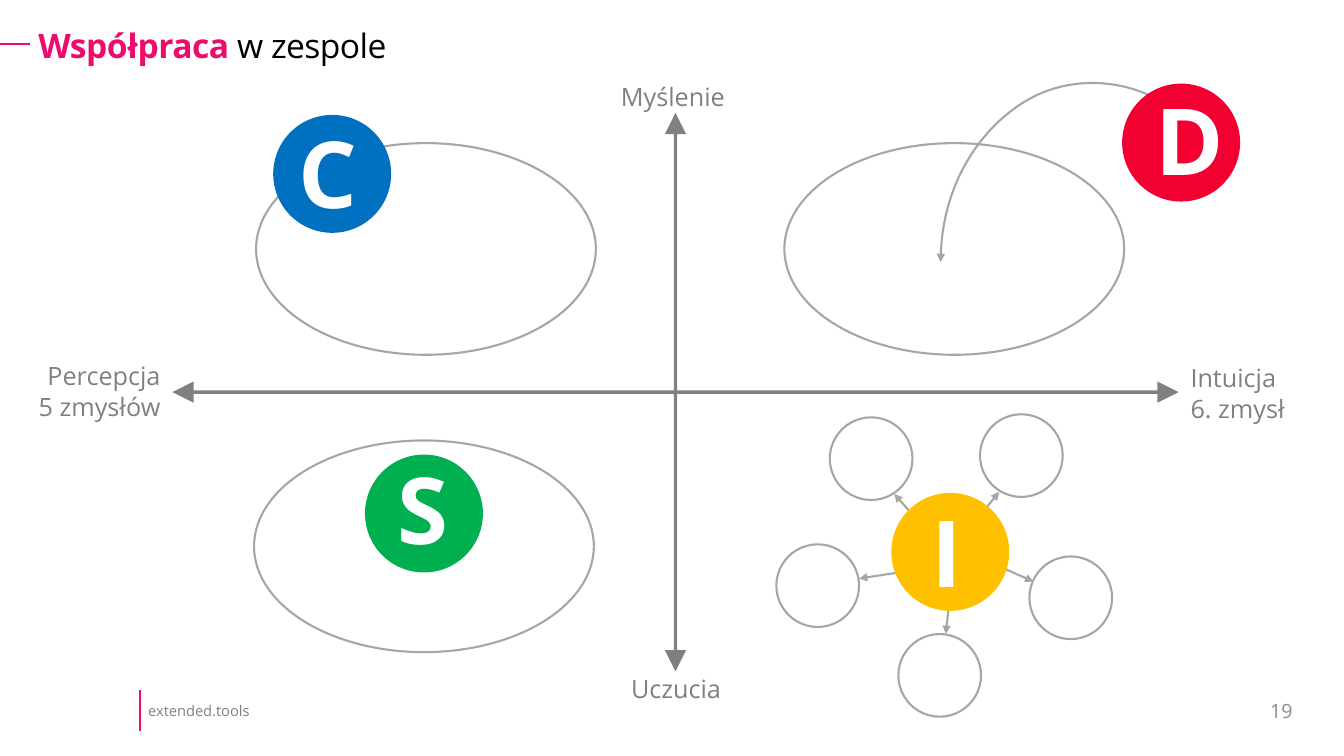
from lxml import etree
from pptx import Presentation
from pptx import util as u
from pptx.dml.color import RGBColor
from pptx.enum import shapes, text
from pptx.oxml.ns import qn

FONT = "Open Sans"
PINK = RGBColor(0xED, 0x0C, 0x6D)
BLACK = RGBColor(0, 0, 0)
WHITE = RGBColor(0xFF, 0xFF, 0xFF)
AXIS_GRAY = RGBColor(0x80, 0x80, 0x80)
NUMBER_GRAY = RGBColor(0x8C, 0x8C, 0x8C)
OUTLINE_GRAY = RGBColor(0xA6, 0xA6, 0xA6)
RED = RGBColor(0xF1, 0x00, 0x31)
GREEN = RGBColor(0x00, 0xB0, 0x50)
YELLOW = RGBColor(0xFF, 0xC0, 0x00)
BLUE = RGBColor(0x00, 0x70, 0xC0)

OVAL_SIZE = (3.37, 2.1)
BADGE_SIZE = 1.17
RING_SIZE = 0.82


def inches(*lengths):
    return [u.Inches(length) for length in lengths]


def format_run(run, size, color, bold=False, spacing=None):
    run.font.name = FONT
    run.font.size = u.Pt(size)
    run.font.color.rgb = color
    run.font.bold = bold
    if spacing is not None:
        run.font._element.set("spc", str(round(spacing * 100)))


def set_insets(frame, horizontal, vertical):
    frame.margin_left = frame.margin_right = u.Inches(horizontal)
    frame.margin_top = frame.margin_bottom = u.Inches(vertical)


def add_text(slide, box, words, size=18, color=AXIS_GRAY, bold=False,
             align=text.PP_ALIGN.LEFT, anchor=text.MSO_ANCHOR.TOP,
             insets=(0.1, 0.05), wrap=False):
    frame = slide.shapes.add_textbox(*inches(*box)).text_frame
    frame.word_wrap = wrap
    frame.vertical_anchor = anchor
    set_insets(frame, *insets)
    for index, line in enumerate(words.split("\n")):
        paragraph = frame.add_paragraph() if index else frame.paragraphs[0]
        paragraph.alignment = align
        run = paragraph.add_run()
        run.text = line
        format_run(run, size, color, bold)


def add_shape(slide, kind, box, fill=None):
    shape = slide.shapes.add_shape(kind, *inches(*box))
    finish_shape(shape, fill)
    return shape


def finish_shape(shape, fill=None):
    shape.shadow.inherit = False
    if fill is None:
        shape.fill.background()
        shape.line.color.rgb = OUTLINE_GRAY
        shape.line.width = u.Pt(1.5)
    else:
        shape.fill.solid()
        shape.fill.fore_color.rgb = fill
        shape.line.fill.background()


def add_arrowhead(line, end):
    etree.SubElement(line._get_or_add_ln(), qn(f"a:{end}"), type="triangle")


def add_line(slide, start, finish, color, arrow=False):
    connector = slide.shapes.add_connector(
        shapes.MSO_CONNECTOR.STRAIGHT, *inches(*start, *finish))
    connector.line.color.rgb = color
    connector.line.width = u.Pt(1.5)
    if arrow:
        etree.SubElement(connector.line._get_or_add_ln(), qn("a:tailEnd"), type="triangle")
    etree.SubElement(connector._element.spPr, qn("a:effectLst"))


def add_oval(slide, left, top):
    add_shape(slide, shapes.MSO_SHAPE.OVAL, (left, top, *OVAL_SIZE))


def add_badge(slide, left, top, letter, color, shift):
    add_shape(slide, shapes.MSO_SHAPE.OVAL, (left, top, BADGE_SIZE, BADGE_SIZE), color)
    add_text(slide, (left + shift[0], top + shift[1], 0.81, 1.21), letter, size=66,
             color=WHITE, bold=True, align=text.PP_ALIGN.CENTER, insets=(0, 0), wrap=True)


def bezier_points(start, first, second, finish, steps=24):
    for step in range(1, steps + 1):
        t = step / steps
        weights = ((1 - t) ** 3, 3 * t * (1 - t) ** 2, 3 * t * t * (1 - t), t ** 3)
        yield tuple(u.Inches(sum(w * c for w, c in zip(weights, axis)))
                    for axis in zip(start, first, second, finish))


def add_title(slide, box):
    title = slide.shapes.title
    title.left, title.top, title.width, title.height = inches(*box)
    frame = title.text_frame
    frame.word_wrap = True
    frame.auto_size = text.MSO_AUTO_SIZE.NONE
    frame.vertical_anchor = text.MSO_ANCHOR.TOP
    set_insets(frame, 0.08, 0.04)
    paragraph = frame.paragraphs[0]
    paragraph.alignment = text.PP_ALIGN.LEFT
    paragraph.line_spacing = 0.9
    for words, color, bold in (("Współpraca", PINK, True), (" w zespole", BLACK, False)):
        run = paragraph.add_run()
        run.text = words
        format_run(run, 24, color, bold, spacing=-0.4)
    rule_y = box[1] + 0.19
    add_line(slide, (0, rule_y), (box[0], rule_y), PINK)


def add_footer(slide, left, top):
    add_text(slide, (left - 0.05, top + 0.04, 1.72, 0.32), "extended.tools", size=10.5,
             anchor=text.MSO_ANCHOR.MIDDLE, insets=(0.13, 0.07), wrap=True)
    add_line(slide, (left, top), (left, top + 0.4), PINK)
    add_text(slide, (11.66, top, 1.26, 0.4), "19", size=14, color=NUMBER_GRAY,
             align=text.PP_ALIGN.RIGHT, anchor=text.MSO_ANCHOR.MIDDLE,
             insets=(0.1, 0.05), wrap=True)


def add_axes(slide, box):
    left, top, width, height = box
    axes = add_shape(slide, shapes.MSO_SHAPE.QUAD_ARROW, box, AXIS_GRAY)
    for index, ratio in enumerate((0.006, 0.019, 0.038)):
        axes.adjustments[index] = ratio
    right, bottom, middle = left + width, top + height, top + height / 2
    add_text(slide, (right + 0.02, middle - 0.34, 1.14, 0.7), "Intuicja\n6. zmysł")
    add_text(slide, (left - 1.44, middle - 0.36, 1.42, 0.7), "Percepcja\n5 zmysłów",
             align=text.PP_ALIGN.RIGHT)
    add_text(slide, (left + 4.44, bottom - 0.03, 1.1, 0.4), "Uczucia",
             align=text.PP_ALIGN.RIGHT)
    add_text(slide, (left + 4.35, top - 0.36, 1.24, 0.4), "Myślenie")


def add_thinking_team(slide, left, top):
    add_oval(slide, left, top)
    add_badge(slide, left + 0.17, top - 0.28, "C", BLUE, (0.14, 0.01))


def add_feeling_team(slide, left, top):
    add_oval(slide, left, top)
    add_badge(slide, left + 1.1, top + 0.14, "S", GREEN, (0.17, -0.02))


def add_leading_team(slide, left, top):
    def place(x, y):
        return left + x, top + y

    tip, crest, tail = place(1.55, 1.18), place(2.61, -0.52), place(4.31, 0.19)
    builder = slide.shapes.build_freeform(*inches(*tip))
    builder.add_line_segments(
        [*bezier_points(tip, place(1.55, 0.23), place(2.15, -0.36), crest),
         *bezier_points(crest, place(3.07, -0.69), place(3.85, -0.63), tail)], close=False)
    curve = builder.convert_to_shape()
    finish_shape(curve)
    add_arrowhead(curve.line, "headEnd")
    add_oval(slide, left, top)
    add_badge(slide, left + 3.35, top - 0.59, "D", RED, (0.26, -0.01))


def add_inspiring_team(slide, left, top):
    spokes = (
        ((0.58, 1.04), (0.54, 1.4), (0.07, 1.4)),
        ((1.03, 0.71), (1.41, 0.88), (1.37, 0.63)),
        ((0.9, 0.2), (1.07, -0.01), (0.88, -0.78)),
        ((0.17, 0.17), (0.03, 0.01), (-0.61, -0.75)),
        ((0.07, 0.79), (-0.32, 0.85), (-1.14, 0.51)),
    )
    for start, finish, ring in spokes:
        (x1, y1), (x2, y2), (x3, y3) = ((left + x, top + y) for x, y in (start, finish, ring))
        add_line(slide, (x1, y1), (x2, y2), OUTLINE_GRAY, arrow=True)
        add_shape(slide, shapes.MSO_SHAPE.OVAL, (x3, y3, RING_SIZE, RING_SIZE))
    add_badge(slide, left, top, "I", YELLOW, (0.15, 0.02))


def main():
    deck = Presentation()
    deck.slide_width, deck.slide_height = inches(13.33, 7.5)
    slide = deck.slides.add_slide(deck.slide_layouts[5])
    add_title(slide, (0.3, 0.25, 12.63, 0.45))
    add_footer(slide, 1.39, 6.85)
    add_axes(slide, (1.71, 1.12, 9.98, 5.54))
    add_thinking_team(slide, 2.54, 1.42)
    add_leading_team(slide, 7.78, 1.42)
    add_feeling_team(slide, 2.52, 4.37)
    add_inspiring_team(slide, 8.84, 4.89)
    deck.save("out.pptx")


if __name__ == "__main__":
    main()
